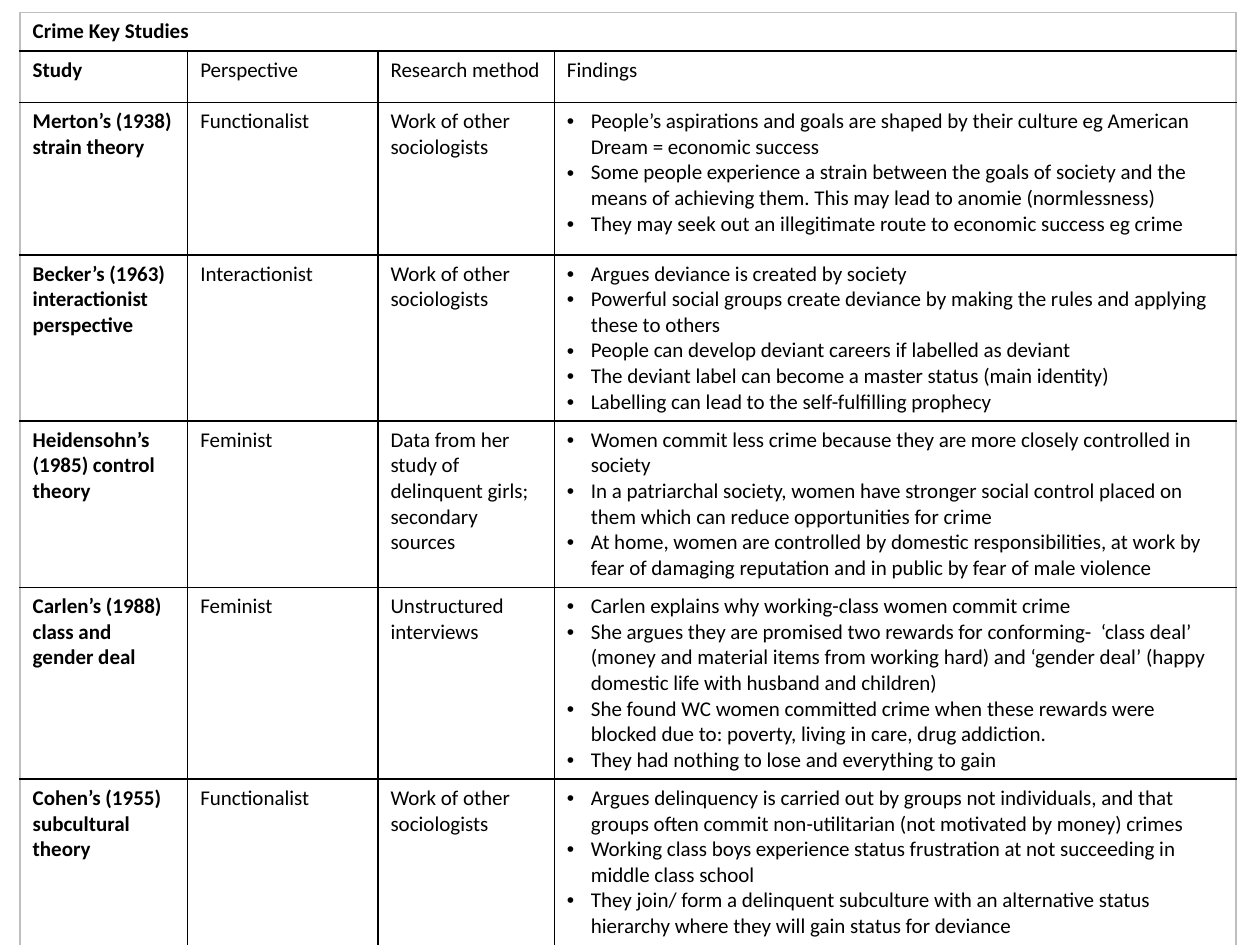
from lxml.etree import SubElement
from pptx import Presentation
from pptx.dml.color import RGBColor
from pptx.oxml.ns import qn
from pptx.util import Inches, Pt

COLORS = {"text": "000000", "inner": "000000", "outer": "BFBFBF"}
FONT = "Calibri"
TITLE = "Crime Key Studies"
HEADINGS = ["Study", "Perspective", "Research method", "Findings"]
COLUMN_WIDTHS = [1.33, 1.51, 1.4, 5.41]
TITLE_HEIGHT, HEADING_HEIGHT, STUDY_HEIGHT = 0.3, 0.41, 1.21
BULLET_INDENT = 0.19
STUDIES = [
    ("Merton’s (1938) strain theory", "Functionalist", "Work of other sociologists", [
        "People’s aspirations and goals are shaped by their culture eg American Dream = economic success",
        "Some people experience a strain between the goals of society and the means of achieving them. "
        "This may lead to anomie (normlessness)",
        "They may seek out an illegitimate route to economic success eg crime",
    ]),
    ("Becker’s (1963) interactionist perspective", "Interactionist", "Work of other sociologists", [
        "Argues deviance is created by society",
        "Powerful social groups create deviance by making the rules and applying these to others",
        "People can develop deviant careers if labelled as deviant",
        "The deviant label can become a master status (main identity)",
        "Labelling can lead to the self-fulfilling prophecy",
    ]),
    ("Heidensohn’s (1985) control theory", "Feminist",
     "Data from her study of delinquent girls; secondary sources", [
        "Women commit less crime because they are more closely controlled in society",
        "In a patriarchal society, women have stronger social control placed on them "
        "which can reduce opportunities for crime",
        "At home, women are controlled by domestic responsibilities, at work by fear of damaging "
        "reputation and in public by fear of male violence",
     ]),
    ("Carlen’s (1988) class and gender deal", "Feminist", "Unstructured interviews", [
        "Carlen explains why working-class women commit crime",
        "She argues they are promised two rewards for conforming-  ‘class deal’ (money and material items "
        "from working hard) and ‘gender deal’ (happy domestic life with husband and children)",
        "She found WC women committed crime when these rewards were blocked due to: "
        "poverty, living in care, drug addiction.",
        "They had nothing to lose and everything to gain",
    ]),
    ("Cohen’s (1955) subcultural theory", "Functionalist", "Work of other sociologists", [
        "Argues delinquency is carried out by groups not individuals, and that groups often commit "
        "non-utilitarian (not motivated by money) crimes",
        "Working class boys experience status frustration at not succeeding in middle class school",
        "They join/ form a delinquent subculture with an alternative status hierarchy "
        "where they will gain status for deviance",
    ]),
]


def add_bullet(paragraph):
    properties = paragraph._p.get_or_add_pPr()
    properties.set("marL", str(Inches(BULLET_INDENT)))
    properties.set("indent", str(-Inches(BULLET_INDENT)))
    SubElement(properties, qn("a:buFont"), typeface="Arial")
    SubElement(properties, qn("a:buChar"), char="•")


def write_cell(cell, content, bold=False):
    bulleted = isinstance(content, list)
    cell.text = "\n".join(content) if bulleted else content
    for paragraph in cell.text_frame.paragraphs:
        font = paragraph.font
        font.name, font.size, font.bold = FONT, Pt(12), bold
        font.color.rgb = RGBColor.from_string(COLORS["text"])
        if bulleted:
            add_bullet(paragraph)


def set_borders(cell, outer_sides):
    properties = cell._tc.get_or_add_tcPr()
    for side in ("L", "R", "T", "B"):
        color = COLORS["outer" if side in outer_sides else "inner"]
        line = SubElement(properties, qn(f"a:ln{side}"), w=str(Pt(1)))
        fill = SubElement(line, qn("a:solidFill"))
        SubElement(fill, qn("a:srgbClr"), val=color)
    cell.fill.background()


def add_studies_table(slide):
    heights = [TITLE_HEIGHT, HEADING_HEIGHT] + [STUDY_HEIGHT] * len(STUDIES)
    rows, columns = len(heights), len(COLUMN_WIDTHS)
    frame = slide.shapes.add_table(rows, columns, Inches(0.16), Inches(0.1),
                                   Inches(sum(COLUMN_WIDTHS)), Inches(sum(heights)))
    table = frame.table
    table.first_row = table.horz_banding = False
    for column, width in zip(table.columns, COLUMN_WIDTHS):
        column.width = Inches(width)
    for row, height in zip(table.rows, heights):
        row.height = Inches(height)
    table.cell(0, 0).merge(table.cell(0, columns - 1))
    write_cell(table.cell(0, 0), TITLE, bold=True)
    for row_index, contents in enumerate([HEADINGS] + STUDIES, start=1):
        for column_index, content in enumerate(contents):
            write_cell(table.cell(row_index, column_index), content, bold=column_index == 0)
    for row_index in range(rows):
        for column_index in range(columns):
            edges = {"L": column_index == 0, "R": column_index == columns - 1 or row_index == 0,
                     "T": row_index == 0, "B": row_index == rows - 1}
            set_borders(table.cell(row_index, column_index),
                        [side for side, is_outer in edges.items() if is_outer])


def main():
    presentation = Presentation()
    presentation.slide_width, presentation.slide_height = Inches(10), Inches(7.5)
    slide = presentation.slides.add_slide(presentation.slide_layouts[6])
    add_studies_table(slide)
    presentation.save("out.pptx")


if __name__ == "__main__":
    main()
